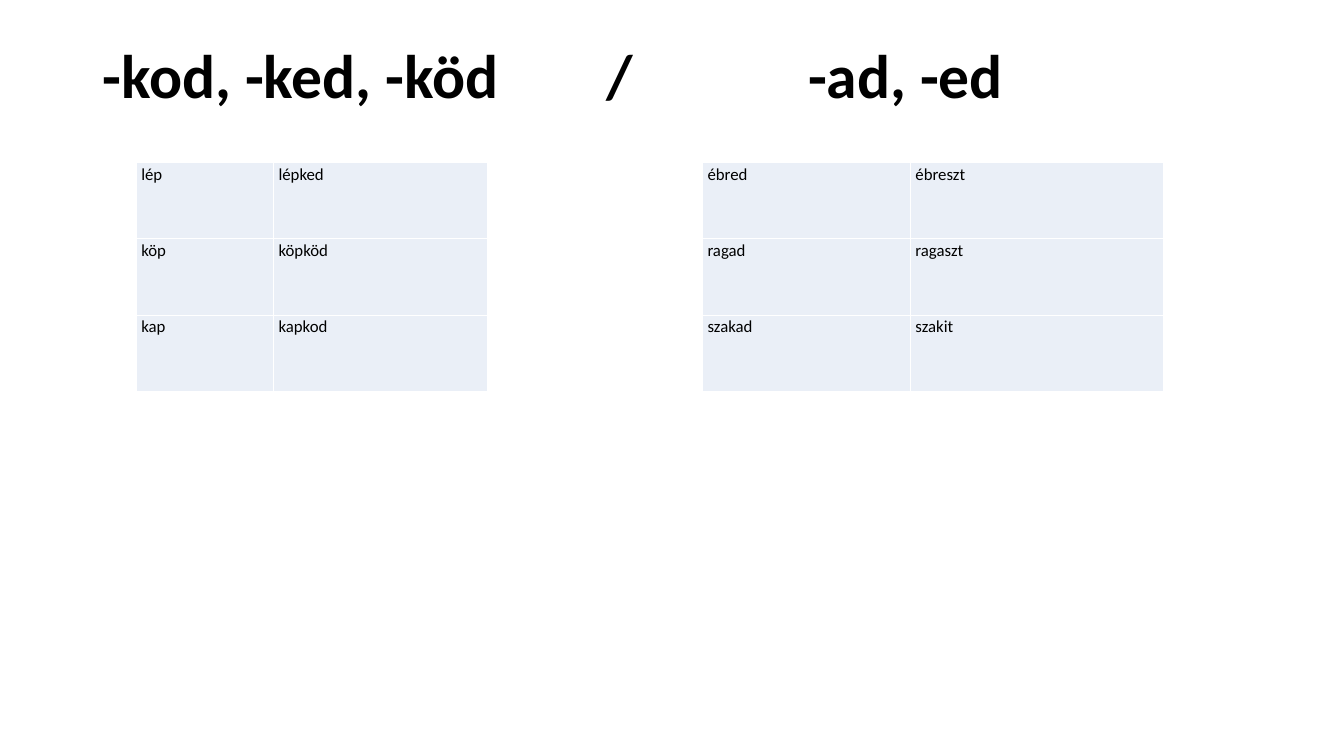
from lxml.etree import SubElement
from pptx import Presentation
from pptx.dml.color import RGBColor
from pptx.enum.text import MSO_ANCHOR, MSO_AUTO_SIZE, PP_ALIGN
from pptx.oxml.ns import qn
from pptx.util import Cm, Pt


def colour(value):
    return RGBColor.from_string(value)


class SuffixSlide:
    """Holds the style and the slide that its elements are added to."""

    font = "Calibri"
    ink = "000000"
    cell_fill = "EAEFF7"
    border = "FFFFFF"
    row_height = Cm(1.92)

    def __init__(self, deck):
        self.slide = deck.slides.add_slide(deck.slide_layouts[5])

    def add_text(self, paragraph, text, size, spacing, bold=False):
        paragraph.alignment = PP_ALIGN.LEFT
        paragraph.line_spacing = spacing
        run = paragraph.add_run()
        run.text = text
        run.font.name = self.font
        run.font.size = Pt(size)
        run.font.bold = bold
        run.font.color.rgb = colour(self.ink)

    def title(self, parts, tab_stops):
        heading = self.slide.shapes.title
        heading.left, heading.top = Cm(2.33), Cm(1.01)
        heading.width, heading.height = Cm(29.21), Cm(3.68)
        frame = heading.text_frame
        frame.word_wrap = True
        frame.auto_size = MSO_AUTO_SIZE.NONE
        frame.vertical_anchor = MSO_ANCHOR.TOP
        paragraph = frame.paragraphs[0]
        stops = SubElement(paragraph._p.get_or_add_pPr(), qn("a:tabLst"))
        for stop in tab_stops:
            SubElement(stops, qn("a:tab"), pos=str(Cm(stop)), algn="l")
        self.add_text(paragraph, "\t".join(parts), 44, 0.9, bold=True)

    def cell(self, cell, word):
        cell.margin_left = cell.margin_right = Cm(0.12)
        cell.margin_top = cell.margin_bottom = 0
        properties = cell._tc.get_or_add_tcPr()
        for side in ("lnL", "lnR", "lnT", "lnB"):
            line = SubElement(properties, qn(f"a:{side}"), w=str(Pt(1)))
            fill = SubElement(line, qn("a:solidFill"))
            SubElement(fill, qn("a:srgbClr"), val=self.border)
        cell.fill.solid()
        cell.fill.fore_color.rgb = colour(self.cell_fill)
        self.add_text(cell.text_frame.paragraphs[0], word, 12, 1.07)

    def word_pairs(self, left, column_widths, pairs):
        table = self.slide.shapes.add_table(
            len(pairs), len(column_widths), Cm(left), Cm(4.1),
            Cm(sum(column_widths)), self.row_height * len(pairs)).table
        table.first_row = table.horz_banding = False
        for column, width in zip(table.columns, column_widths):
            column.width = Cm(width)
        for row, pair in zip(table.rows, pairs):
            row.height = self.row_height
            for cell, word in zip(row.cells, pair):
                self.cell(cell, word)


def main():
    deck = Presentation()
    deck.slide_width, deck.slide_height = Cm(33.87), Cm(19.05)
    suffixes = SuffixSlide(deck)
    suffixes.title(["-kod, -ked, -köd", "/", "-ad, -ed"], [12.7, 17.78])
    suffixes.word_pairs(3.44, [3.46, 5.39], [
        ("lép", "lépked"), ("köp", "köpköd"), ("kap", "kapkod")])
    suffixes.word_pairs(17.71, [5.24, 6.38], [
        ("ébred", "ébreszt"), ("ragad", "ragaszt"), ("szakad", "szakit")])
    deck.save("out.pptx")


if __name__ == "__main__":
    main()
